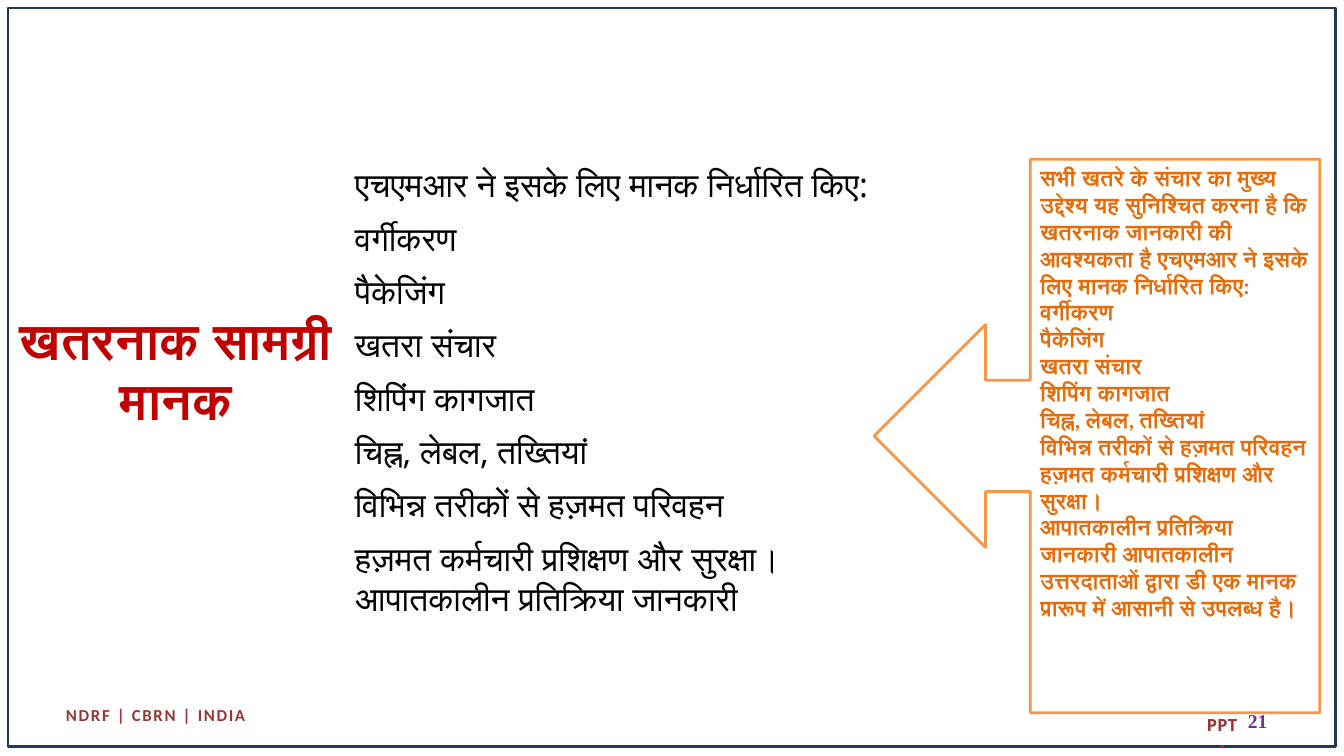
from pptx import Presentation
from pptx.dml.color import RGBColor
from pptx.enum.shapes import MSO_SHAPE
from pptx.enum.text import MSO_ANCHOR, MSO_AUTO_SIZE, PP_ALIGN
from pptx.oxml.ns import qn
from pptx.util import Inches, Pt
from lxml.etree import SubElement

WHITE = RGBColor(0xFF, 0xFF, 0xFF)
BLACK = RGBColor(0x00, 0x00, 0x00)
NAVY = RGBColor(0x23, 0x39, 0x53)
RED = RGBColor(0xC0, 0x00, 0x00)
MAROON = RGBColor(0x95, 0x37, 0x35)
PURPLE = RGBColor(0x70, 0x30, 0xA0)
ORANGE = RGBColor(0xF7, 0x96, 0x46)
DARK_ORANGE = RGBColor(0xE4, 0x6C, 0x0A)

HEADING = "एचएमआर ने इसके लिए मानक निर्धारित किए:"
STANDARDS = [
    "वर्गीकरण",
    "पैकेजिंग",
    "खतरा संचार",
    "शिपिंग कागजात",
    "चिह्न, लेबल, तख्तियां",
    "विभिन्न तरीकों से हज़मत परिवहन",
    "हज़मत कर्मचारी प्रशिक्षण और सुरक्षा।",
]
RESPONSE = "आपातकालीन प्रतिक्रिया जानकारी"
PURPOSE = "सभी खतरे के संचार का मुख्य उद्देश्य यह सुनिश्चित करना है कि खतरनाक जानकारी की आवश्यकता है "
AVAILABILITY = " आपातकालीन उत्तरदाताओं द्वारा डी एक मानक प्रारूप में आसानी से उपलब्ध है।"


def place(sp, left, top, width, height):
    sp.left, sp.top = Inches(left), Inches(top)
    sp.width, sp.height = Inches(width), Inches(height)


def write(tf, lines, size, font, color, bold=True, align=PP_ALIGN.LEFT, script_font=None):
    tf.text = "\n".join(lines)
    for p in tf.paragraphs:
        p.alignment = align
        p.space_before = Pt(0)
        for r in p.runs:
            r.font.size = Pt(size)
            r.font.name = font
            r.font.bold = bold
            r.font.color.rgb = color
            if script_font:
                SubElement(r.font._element, qn("a:cs")).set("typeface", script_font)


prs = Presentation()
prs.slide_width, prs.slide_height = Inches(13.33), Inches(7.5)
s = prs.slides.add_slide(prs.slide_layouts[1])
title, body = s.placeholders

frame = s.shapes.add_shape(
    MSO_SHAPE.RECTANGLE, Inches(0.08), Inches(0.08), Inches(13.17), Inches(7.33))
frame.shadow.inherit = False
frame.fill.background()
frame.line.color.rgb = NAVY
frame.line.width = Pt(2)

footers = [
    ("NDRF | CBRN | INDIA", (0.17, 6.9, 2.75, 0.37), 12, "Calibri", MAROON, PP_ALIGN.CENTER, 0.09),
    ("PPT -", (11.83, 7, 0.58, 0.37), 12, "Open Sans", MAROON, PP_ALIGN.CENTER, 0.09),
    ("21", (9.56, 6.95, 3.11, 0.4), 14, "Times New Roman", PURPLE, PP_ALIGN.RIGHT, 0.05),
]
for text, box, size, font, color, align, inset in footers:
    tb = s.shapes.add_textbox(*map(Inches, box))
    tf = tb.text_frame
    tf.word_wrap = text != "PPT -"
    tf.margin_top = tf.margin_bottom = Inches(inset)
    write(tf, [text], size, font, color, align=align)
    if text == "21":
        tf.vertical_anchor = MSO_ANCHOR.MIDDLE
    if text.startswith("NDRF"):
        tf.paragraphs[0].runs[0].font._element.set("spc", "120")

place(title, -0.17, 3.04, 3.83, 1.25)
tf = title.text_frame
tf.auto_size = MSO_AUTO_SIZE.NONE
tf.vertical_anchor = MSO_ANCHOR.MIDDLE
write(tf, ["खतरनाक सामग्री मानक"], 36, "Open Sans", RED,
      align=PP_ALIGN.CENTER, script_font="Mangal")

place(body, 3.42, 1.58, 5.83, 2.91)
tf = body.text_frame
tf.auto_size = MSO_AUTO_SIZE.NONE
write(tf, [HEADING, *STANDARDS, RESPONSE], 24, "Open Sans", BLACK,
      bold=False, script_font="Open Sans")
for p in tf.paragraphs:
    pPr = p._p.get_or_add_pPr()
    pPr.set("marL", str(Inches(0.38)))
    pPr.set("indent", str(-Inches(0.38)))
    SubElement(pPr, qn("a:buNone"))
for p in tf.paragraphs[1:-1]:
    p.space_before = Pt(9.3)

callout = s.shapes.add_shape(
    MSO_SHAPE.LEFT_ARROW_CALLOUT, Inches(8.67), Inches(1.58), Inches(4.42), Inches(5.49))
callout.shadow.inherit = False
callout.fill.solid()
callout.fill.fore_color.rgb = WHITE
callout.line.color.rgb = ORANGE
callout.line.width = Pt(2)
tf = callout.text_frame
tf.word_wrap = True
tf.vertical_anchor = MSO_ANCHOR.TOP
write(tf, [PURPOSE + HEADING, *STANDARDS, RESPONSE + AVAILABILITY], 16, "Calibri",
      DARK_ORANGE, script_font="Mangal")

prs.save("out.pptx")
